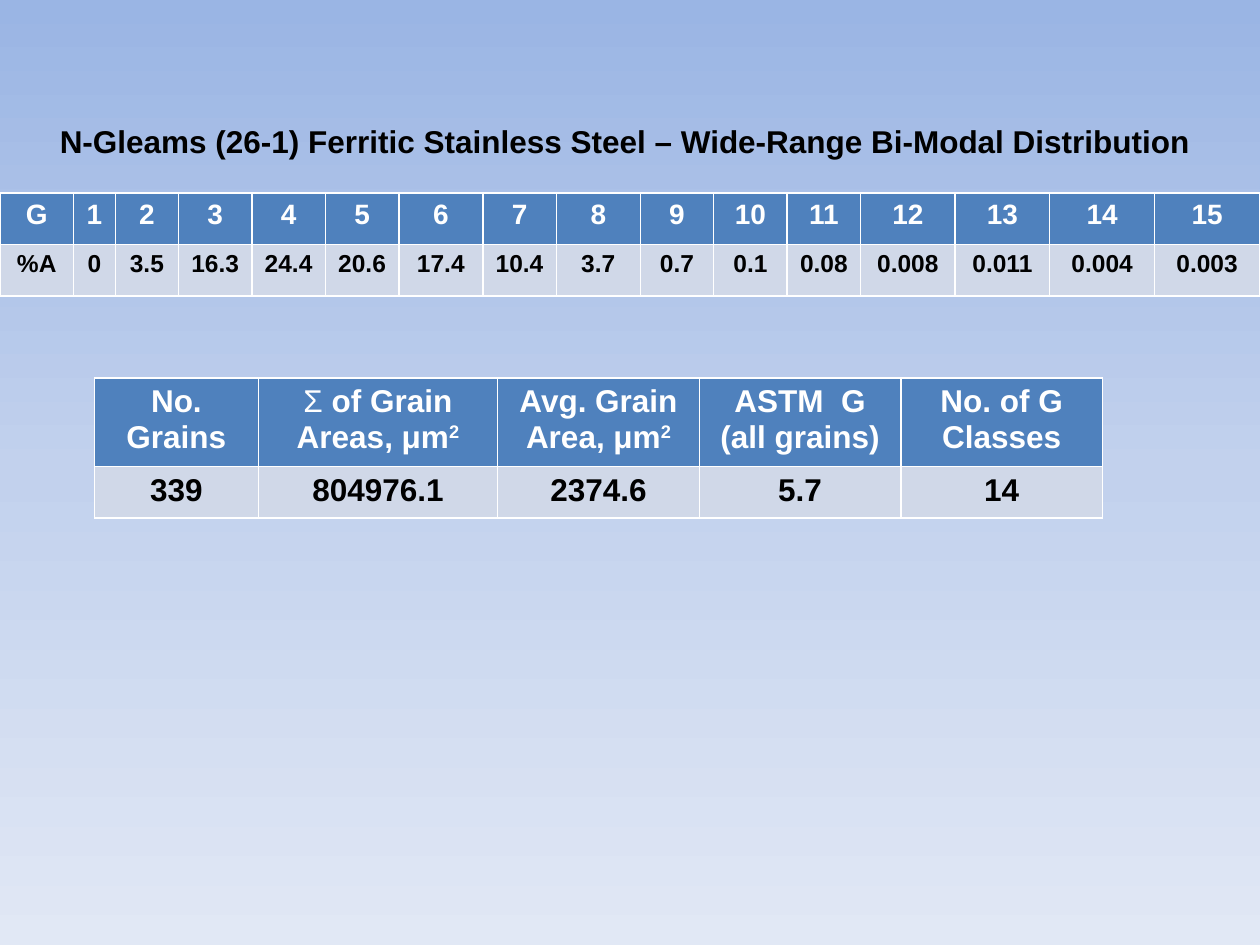
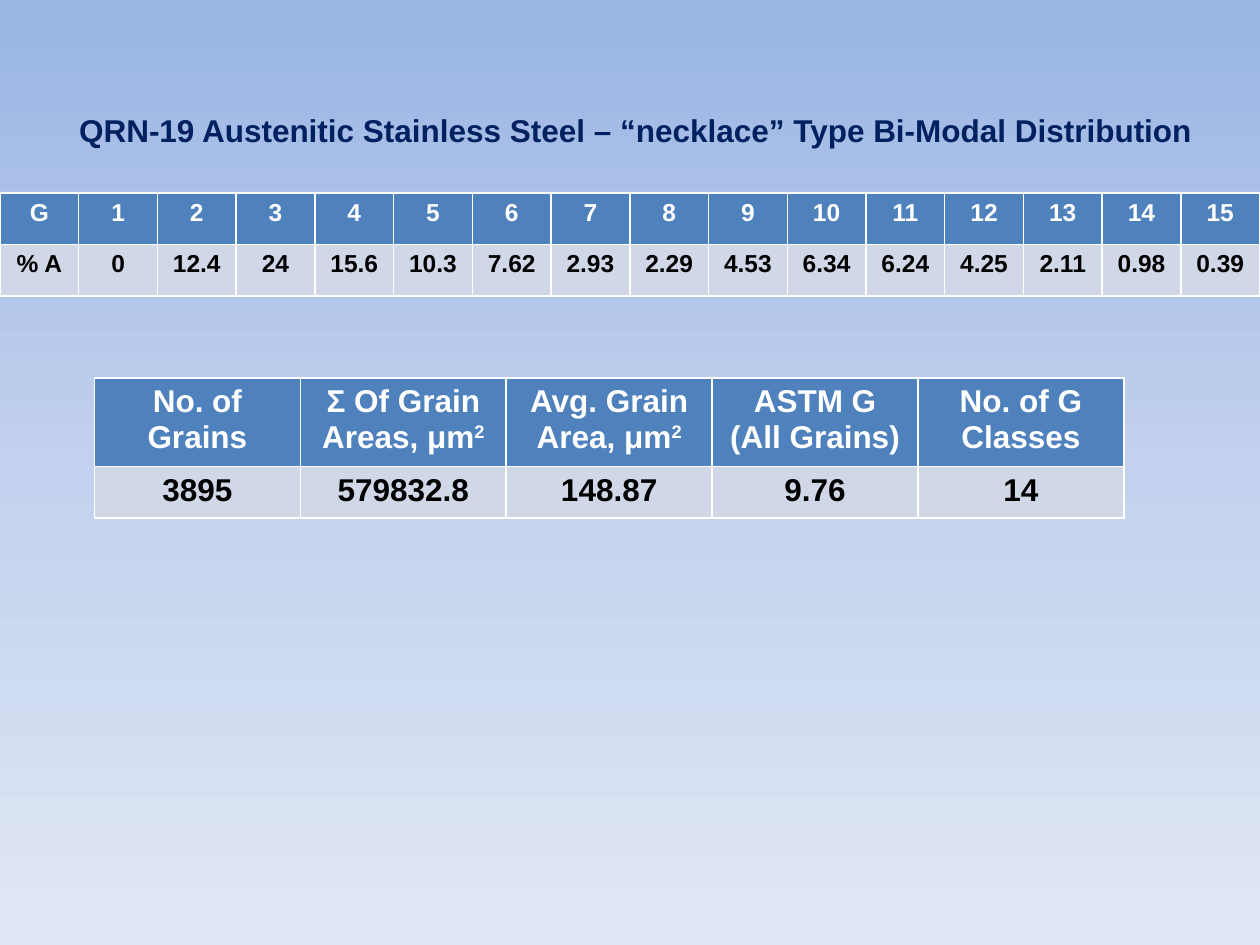
from copy import deepcopy
from dataclasses import dataclass

from lxml import etree
from pptx import Presentation
from pptx import util as u
from pptx.dml.color import RGBColor
from pptx.enum import text
from pptx.oxml.ns import qn


@dataclass(frozen=True)
class Theme:
    font: str = "Arial"
    backdrop: tuple = ((0, "9AB5E4"), (0.5, "C2D1ED"), (1, "E1E8F5"))
    header: str = "4F81BD"
    body: str = "D0D8E8"
    white: str = "FFFFFF"
    black: str = "000000"
    navy: str = "002060"
    large: int = 18
    medium: int = 16
    small: int = 14
    border: float = 1


class Deck:
    def __init__(self, theme):
        self.theme = theme
        self.prs = Presentation()
        self.prs.slide_width = u.Inches(10)
        self.prs.slide_height = u.Inches(7.5)
        self.s = None
        self.paint_master()

    def paint_master(self):
        """Give every slide the same top-to-bottom gradient."""
        fill = self.prs.slide_master.background.fill
        fill.gradient()
        fill.gradient_angle = 270
        stops = next(self.prs.slide_master.element.iter(qn("a:gsLst")))
        stops.append(deepcopy(stops[-1]))
        for stop, (position, color) in zip(fill.gradient_stops, self.theme.backdrop):
            stop.position = position
            stop.color.rgb = RGBColor.from_string(color)

    def slide(self):
        self.s = self.prs.slides.add_slide(self.prs.slide_layouts[6])

    def run(self, p, content, size, color, raised=False):
        r = p.add_run()
        r.text = content
        r.font.name = self.theme.font
        r.font.size = u.Pt(size)
        r.font.bold = True
        r.font.color.rgb = RGBColor.from_string(color)
        if raised:
            r.font._element.set("baseline", "30000")

    def title(self, content, left, top, width, color):
        sp = self.s.shapes.add_textbox(*map(u.Inches, (left, top, width, 0.4)))
        tf = sp.text_frame
        tf.word_wrap = True
        tf.auto_size = text.MSO_AUTO_SIZE.SHAPE_TO_FIT_TEXT
        p = tf.paragraphs[0]
        p.alignment = text.PP_ALIGN.CENTER
        self.run(p, content, self.theme.large, color)

    def bullet(self, p, symbol):
        pPr = p._p.get_or_add_pPr()
        pPr.set("marL", "0")
        pPr.set("indent", "0")
        etree.SubElement(pPr, qn("a:buFont"), typeface=self.theme.font)
        etree.SubElement(pPr, qn("a:buChar"), char=symbol)

    def borders(self, cell):
        tcPr = cell._tc.get_or_add_tcPr()
        for side in "LRTB":
            ln = etree.SubElement(tcPr, qn(f"a:ln{side}"), w=str(u.Pt(self.theme.border)))
            fill = etree.SubElement(ln, qn("a:solidFill"))
            etree.SubElement(fill, qn("a:srgbClr"), val=self.theme.white)

    def cell(self, cell, content, size, color, fill):
        """Fill a cell; a pair is (bullet, text), and ^ starts a superscript."""
        symbol, content = content if isinstance(content, tuple) else (None, content)
        self.borders(cell)
        cell.fill.solid()
        cell.fill.fore_color.rgb = RGBColor.from_string(fill)
        tf = cell.text_frame
        for i, line in enumerate(content.split("\n")):
            p = tf.add_paragraph() if i else tf.paragraphs[0]
            p.alignment = text.PP_ALIGN.CENTER
            if symbol:
                self.bullet(p, symbol)
            base, _, power = line.partition("^")
            self.run(p, base, size, color)
            if power:
                self.run(p, power, size, color, raised=True)

    def table(self, rows, left, top, width, heights, weights, sizes):
        """Draw a header row and a value row; weights share out the width."""
        t = self.theme
        frame = self.s.shapes.add_table(
            len(rows), len(weights),
            *map(u.Inches, (left, top, width, sum(heights))))
        table = frame.table
        for column, weight in zip(table.columns, weights):
            column.width = u.Inches(width * weight / sum(weights))
        styles = ((t.white, t.header), (t.black, t.body))
        for i, (row, height, size, style) in enumerate(zip(rows, heights, sizes, styles)):
            table.rows[i].height = u.Inches(height)
            for j, content in enumerate(row):
                self.cell(table.cell(i, j), content, size, *style)

    def distribution(self, label, percents, weights, header_size):
        """Area percentage for each grain size number G."""
        grades = ["G"] + [str(g) for g in range(1, 16)]
        self.table([grades, [label] + percents.split()], 0, 1.53, 10,
                   (0.41, 0.41), weights, (header_size, self.theme.small))

    def summary(self, headings, values, width, weights):
        self.table([headings, values.split()], 0.75, 3, width,
                   (0.7, 0.41), weights, (self.theme.large,) * 2)


def main():
    theme = Theme()
    deck = Deck(theme)
    average, classes = "Avg. Grain Area, μm^2", "No. of G Classes"

    deck.slide()
    deck.distribution(
        "%A",
        "0 3.5 16.3 24.4 20.6 17.4 10.4 3.7 0.7 0.1 0.08 0.008 0.011 0.004 0.003",
        (7, 4, 6, 7, 7, 7, 8, 7, 8, 7, 7, 7, 9, 9, 10, 10), theme.medium)
    deck.title("N-Gleams (26-1) Ferritic Stainless Steel – Wide-Range Bi-Modal Distribution",
               0.25, 0.92, 9.42, theme.black)
    deck.summary(
        ["No. Grains", ("Σ", " of Grain Areas, μm^2"), average,
         "ASTM  G\n(all grains)", classes],
        "339 804976.1 2374.6 5.7 14", 8, (13, 19, 16, 16, 16))

    deck.slide()
    deck.distribution(
        "% A",
        "0 12.4 24 15.6 10.3 7.62 2.93 2.29 4.53 6.34 6.24 4.25 2.11 0.98 0.39",
        (1,) * 16, theme.small)
    deck.title("QRN-19 Austenitic Stainless Steel – “necklace” Type Bi-Modal Distribution",
               0.42, 0.83, 9.25, theme.navy)
    deck.summary(
        ["No. of Grains", "Σ Of Grain Areas, μm^2", average,
         "ASTM G (All Grains)", classes],
        "3895 579832.8 148.87 9.76 14", 8.17, (1,) * 5)

    deck.prs.save("out.pptx")


if __name__ == "__main__":
    main()
